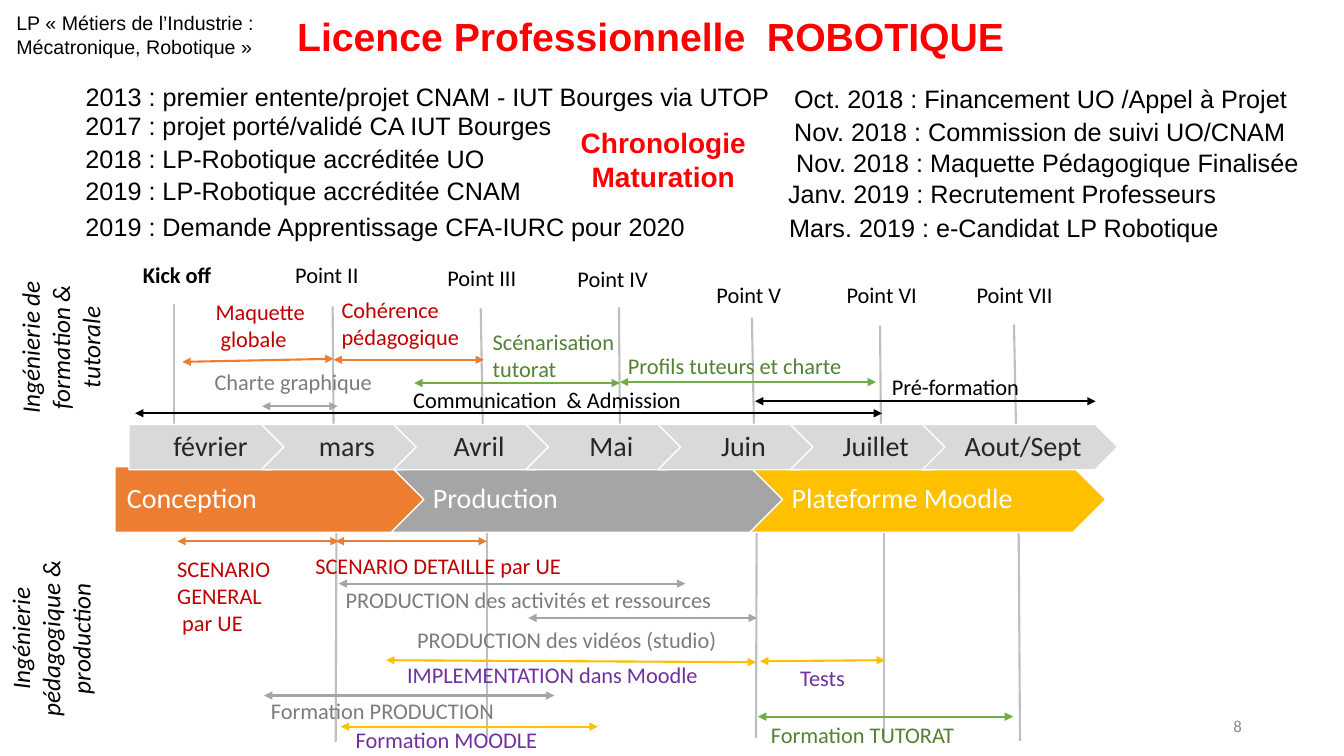
from lxml import etree
from pptx import Presentation
from pptx.dml.color import RGBColor
from pptx.enum.shapes import MSO_CONNECTOR as Connector, MSO_SHAPE as Shape
from pptx.enum.text import MSO_ANCHOR as Anchor, MSO_AUTO_SIZE as AutoSize, PP_ALIGN as Align
from pptx.oxml.ns import qn
from pptx.util import Pt

# Theme: colours, fonts and type sizes
THEME = {
    "black": "000000", "white": "FFFFFF", "red": "FF0000", "dark red": "C00000",
    "orange": "ED7D31", "grey": "A5A5A5", "grey text": "7C7C7C", "gold": "FFC000",
    "purple": "7030A0", "green": "70AD47", "green text": "548235",
    "guide": "BFBFBF", "month": "D9D9D9", "month text": "262626", "page": "8C8C8C",
    "heading font": "Arial", "body font": "Calibri",
    "title": 28, "subtitle": 20, "history": 18, "header": 14,
    "band": 20, "axis": 18, "label": 16, "number": 12,
    "stroke": 1.5, "outline": 1, "indent": 3.6,
}

# Content: text with left, top and width
PROGRAMME = ["LP «\u00a0Métiers de l’Industrie :", "Mécatronique, Robotique\u00a0»"]
TITLE = "Licence Professionnelle  ROBOTIQUE"
SUBTITLE = ["Chronologie", "Maturation"]
HISTORY = [
    ("2013 : premier entente/projet CNAM - IUT Bourges via UTOP", 54, 54.7, 507.6),
    ("2017 : projet porté/validé CA IUT Bourges", 54, 75.6, 350.6),
    ("2018 : LP-Robotique accréditée UO", 54, 98.6, 302.4),
    ("2019 : LP-Robotique accréditée CNAM", 54, 121.7, 328.3),
    ("2019 : Demande Apprentissage CFA-IURC pour 2020", 54, 147.6, 446.4),
    ("Oct. 2018 : Financement UO /Appel à Projet", 560.2, 56.2, 370.1),
    ("Nov. 2018 : Commission de suivi UO/CNAM", 560.2, 79.9, 368.6),
    ("Nov. 2018 : Maquette Pédagogique Finalisée", 561.6, 101.5, 376.6),
    ("Janv. 2019 : Recrutement Professeurs", 555.8, 123.8, 330.5),
    ("Mars. 2019 : e-Candidat LP Robotique", 556.6, 148.3, 324),
]
# Name, label left and top, guide line from and to
MILESTONES = [
    ("Kick off", 95, 182.9, (124.6, 217.4, 124.6, 306.7)),
    ("Point II", 203.8, 182.9, (237.6, 218.9, 238.3, 307.4)),
    ("Point III", 312.5, 185, (343.4, 220.3, 344.9, 307.4)),
    ("Point IV", 405.4, 185.8, (442.1, 219.6, 442.8, 306.7)),
    ("Point V", 504.7, 197.3, (537.1, 226.8, 538.6, 306.7)),
    ("Point VI", 597.6, 197.3, (628.6, 232.6, 629.3, 306.7)),
    ("Point VII", 690.5, 197.3, (724.3, 231.8, 725.8, 306.7)),
]
LOWER_GUIDES = [
    (240.5, 322.6, 239.8, 529.9), (347.8, 316.8, 347.8, 527),
    (540.7, 316.8, 540, 527), (631.4, 313.9, 631.4, 527),
    (727.2, 314.6, 728.6, 529.2),
]
# Lines of text, left, top, width, text colour, arrow from and to, arrow colour
ACTIVITIES = [
    (["Maquette", "globale"], 146.9, 209.5, 103, "dark red",
     (130.3, 258.5, 238.3, 256.3), "orange"),
    (["Cohérence pédagogique"], 236.9, 208.1, 115.2, "dark red",
     (238.3, 257, 345.6, 257), "orange"),
    (["Scénarisation tutorat"], 344.9, 231.1, 127.4, "green text",
     (295.9, 273.6, 442.8, 273.6), "green"),
    (["Profils tuteurs et charte"], 441.4, 247.7, 265, "green text",
     (442.8, 272.9, 625.7, 272.9), "green"),
    (["Charte graphique"], 146.2, 259.2, 166.3, "grey text",
     (187.2, 290.2, 241.2, 290.2), "grey"),
    (["Communication  & Admission"], 288, 272.2, 344.9, "black",
     (96.5, 295.2, 630, 295.2), "black"),
    (["Pré-formation"], 630, 262.8, 136.8, "black",
     (539.3, 286.6, 782.6, 286.6), "black"),
    (["SCENARIO GENERAL", "par UE"], 119.5, 393.1, 120.2, "dark red",
     (126.7, 386.6, 241.9, 386.6), "orange"),
    (["SCENARIO DETAILLE par UE"], 218.2, 391, 234.7, "dark red",
     (239.8, 386.6, 347.8, 386.6), "orange"),
    (["PRODUCTION des activités et ressources"], 239.8, 415.4, 375.1, "grey text",
     (241.9, 416.9, 489.6, 416.9), "grey"),
    (["PRODUCTION des vidéos (studio)"], 290.9, 443.5, 286.6, "grey text",
     (377.3, 441.4, 540.7, 441.4), "grey"),
    (["IMPLEMENTATION dans Moodle"], 283.7, 468.7, 273.6, "purple",
     (275.8, 471.6, 540, 473), "gold"),
    (["Tests"], 564.5, 470.9, 70.6, "purple",
     (542.9, 472.3, 632.2, 471.6), "gold"),
    (["Formation PRODUCTION"], 186.5, 494.6, 216, "grey text",
     (188.6, 496.8, 396, 496.8), "grey"),
    (["Formation MOODLE"], 247, 514.8, 177.1, "purple",
     (243.4, 519.1, 427, 519.1), "gold"),
    (["Formation TUTORAT"], 543.6, 511.9, 169.2, "green text",
     (541.4, 511.9, 723.6, 511.9), "green"),
]
AXES = [
    (["Ingénierie de formation &", "tutorale"], -23, 211.7, 132.5),
    (["Ingénierie pédagogique & production"], -34.6, 419.8, 141.8),
]
PHASES = [("Conception", 82.1, 303.1, "orange"), ("Production", 279.4, 417.6, "grey"),
          ("Plateforme Moodle", 535.7, 254.2, "gold")]
MONTHS = ["février", "mars", "Avril", "Mai", "Juin", "Juillet", "Aout/Sept"]

deck = Presentation()
deck.slide_width, deck.slide_height = Pt(960), Pt(540)
slide = deck.slides.add_slide(deck.slide_layouts[6])


def colour(key):
    return RGBColor.from_string(THEME[key])


def style(paragraph, size, ink, font="body font", align=Align.LEFT, bold=False, italic=False):
    paragraph.alignment = align
    for run in paragraph.runs:
        run.font.name, run.font.size = THEME[font], Pt(THEME[size])
        run.font.bold, run.font.italic = bold, italic
        run.font.color.rgb = colour(ink)


def write(lines, left, top, width, height, size, ink, wrap=True, **look):
    box = slide.shapes.add_textbox(Pt(left), Pt(top), Pt(width), Pt(height))
    frame = box.text_frame
    frame.text = "\n".join(lines)
    frame.word_wrap, frame.auto_size = wrap, AutoSize.SHAPE_TO_FIT_TEXT
    for paragraph in frame.paragraphs:
        style(paragraph, size, ink, **look)
    return box


def draw_line(ends, ink, arrows=False):
    link = slide.shapes.add_connector(Connector.STRAIGHT, *map(Pt, ends))
    link.line.color.rgb, link.line.width = colour(ink), Pt(THEME["stroke"])
    if arrows:
        outline = link.line._get_or_add_ln()
        for end in ("a:headEnd", "a:tailEnd"):
            etree.SubElement(outline, qn(end), type="triangle")
    etree.SubElement(link._element.spPr, qn("a:effectLst"))


def draw_band(text, index, left, top, width, height, fill, ink, align):
    kind = Shape.CHEVRON if index else Shape.PENTAGON
    band = slide.shapes.add_shape(kind, Pt(left), Pt(top), Pt(width), Pt(height))
    band.shadow.inherit = False
    band.fill.solid()
    band.fill.fore_color.rgb = colour(fill)
    band.line.color.rgb, band.line.width = colour("white"), Pt(THEME["outline"])
    frame = band.text_frame
    frame.text = text
    frame.word_wrap, frame.vertical_anchor = True, Anchor.MIDDLE
    frame.margin_left, frame.margin_right = Pt(6.5 if index else 8.6), Pt(2.2)
    frame.margin_top = frame.margin_bottom = Pt(4.3)
    frame.paragraphs[0].line_spacing = 0.9
    style(frame.paragraphs[0], "band", ink, align=align)


# Heading and history
write(PROGRAMME, 4.6, 4.3, 184.7, 41, "header", "black", wrap=False, font="heading font")
write([TITLE], 205.2, 5, 533.5, 41, "title", "red", wrap=False, font="heading font", bold=True)
write(SUBTITLE, 402.5, 86.4, 142.6, 55.4, "subtitle", "red", font="heading font",
      align=Align.CENTER, bold=True)
for event, left, top, width in HISTORY:
    write([event], left, top, width, 28.8, "history", "black", wrap=False, font="heading font")

# Guide lines and milestones
for guide in LOWER_GUIDES:
    draw_line(guide, "guide")
for name, left, top, guide in MILESTONES:
    draw_line(guide, "guide")
    write([name], left, top, 113, 26.6, "label", "black", bold=name == "Kick off")

# Activities with their spans
for lines, left, top, width, ink, span, span_ink in ACTIVITIES:
    draw_line(span, span_ink, arrows=True)
    label = write(lines, left, top, width, 26.6, "label", ink)
    for paragraph in label.text_frame.paragraphs[1:]:
        paragraph._p.get_or_add_pPr().set("marL", str(Pt(THEME["indent"])))

# Row titles on the left
for lines, left, top, width in AXES:
    axis = write(lines, left, top, width, 72.7, "axis", "black", align=Align.CENTER, italic=True)
    axis.rotation = 270

# Phase and month bands
for index, (phase, left, width, fill) in enumerate(PHASES):
    draw_band(phase, index, left, 333.4, width, 46.8, fill, "white", Align.LEFT)
for index, month in enumerate(MONTHS):
    width = 139.7 if month == MONTHS[-1] else 118.1
    draw_band(month, index, 92.2 + 94.44 * index, 303.1, width, 32.4,
              "month", "month text", Align.CENTER)

# Page number
write(["8"], 678.2, 507.5, 216, 22, "number", "page", align=Align.RIGHT)

deck.save("out.pptx")
